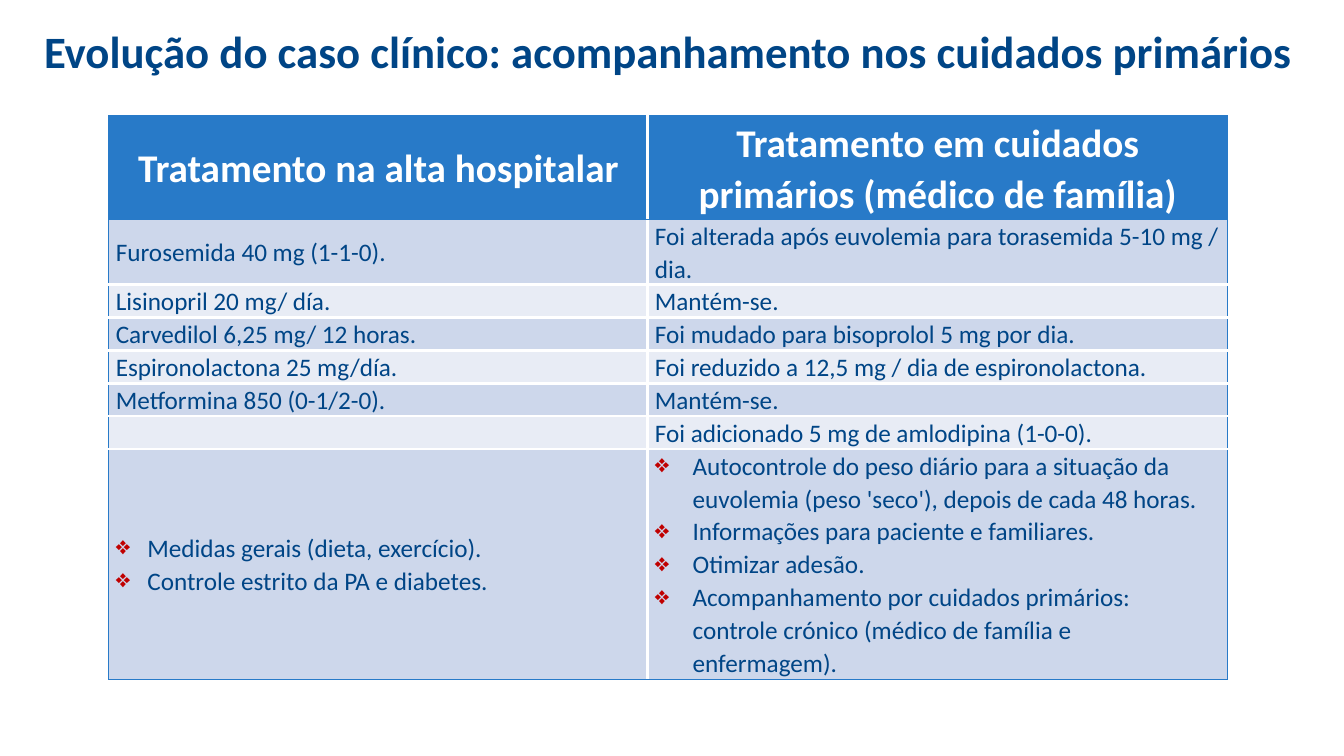
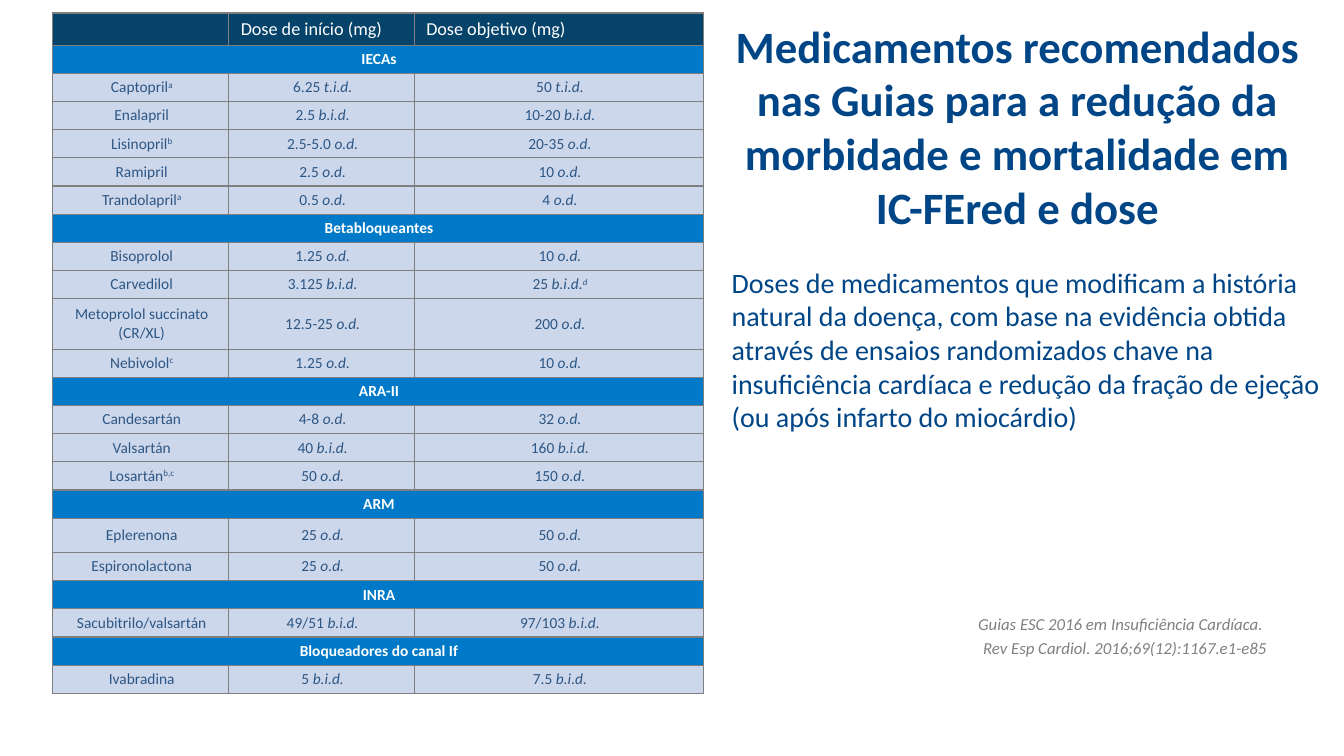
from dataclasses import dataclass

from lxml import etree
from pptx import Presentation
from pptx.dml.color import RGBColor
from pptx.enum.text import MSO_ANCHOR, PP_ALIGN
from pptx.oxml.ns import qn
from pptx.util import Pt

LEFT, CENTER, RIGHT = PP_ALIGN.LEFT, PP_ALIGN.CENTER, PP_ALIGN.RIGHT
TOP, MIDDLE = MSO_ANCHOR.TOP, MSO_ANCHOR.MIDDLE


@dataclass(frozen=True)
class Theme:
    font: str = "Calibri"
    navy: str = "004586"
    blue: str = "287AC8"
    band_dark: str = "CDD7EB"
    band_light: str = "E8ECF5"
    dose_header: str = "06436B"
    group: str = "007AC8"
    dose_text: str = "2C5684"
    grid: str = "7F7F7F"
    gray: str = "808080"
    bullet: str = "C00000"
    white: str = "FFFFFF"
    title_size: float = 32
    heading_size: float = 28
    intro_size: float = 20
    body_size: float = 18
    dose_header_size: float = 13
    source_size: float = 12
    dose_size: float = 11


THEME = Theme()

# Treatment table: a list in a cell becomes bullets
TREATMENT_HEADER = ("Tratamento na alta hospitalar",
                    "Tratamento em cuidados primários (médico de família)")
TREATMENTS = [
    ("Furosemida 40 mg (1-1-0).",
     "Foi alterada após euvolemia para torasemida 5-10 mg / dia."),
    ("Lisinopril 20 mg/ día.", "Mantém-se."),
    ("Carvedilol 6,25 mg/ 12 horas.",
     "Foi mudado para bisoprolol 5 mg por dia."),
    ("Espironolactona 25 mg/día.",
     "Foi reduzido a 12,5 mg / dia de espironolactona."),
    ("Metformina 850 (0-1/2-0).", "Mantém-se."),
    ("", "Foi adicionado 5 mg de amlodipina (1-0-0)."),
    (["Medidas gerais (dieta, exercício).",
      "Controle estrito da PA e diabetes."],
     ["Autocontrole do peso diário para a situação da euvolemia "
      "(peso 'seco'), depois de cada 48 horas.",
      "Informações para paciente e familiares.",
      "Otimizar adesão.",
      "Acompanhamento por cuidados primários: controle crónico "
      "(médico de família e enfermagem)."]),
]
TREATMENT_HEIGHTS = [74, 46.5] + [23.5] * 5 + [164.5]
BULLET_INDENTS = (22.5, 27)

# Dose table: the text after ^ is a superscript mark
DOSE_HEADER = ("", "Dose de início (mg)", "Dose objetivo (mg)")
DOSE_GROUPS = {
    "IECAs": [
        ("Captopril^a", "6.25 t.i.d.", "50 t.i.d."),
        ("Enalapril", "2.5 b.i.d.", "10-20 b.i.d."),
        ("Lisinopril^b", "2.5-5.0 o.d.", "20-35 o.d."),
        ("Ramipril", "2.5 o.d.", "10 o.d."),
        ("Trandolapril^a", "0.5 o.d.", "4 o.d."),
    ],
    "Betabloqueantes": [
        ("Bisoprolol", "1.25 o.d.", "10 o.d."),
        ("Carvedilol", "3.125 b.i.d.", "25 b.i.d.^d"),
        ("Metoprolol succinato (CR/XL)", "12.5-25 o.d.", "200 o.d."),
        ("Nebivolol^c", "1.25 o.d.", "10 o.d."),
    ],
    "ARA-II": [
        ("Candesartán", "4-8 o.d.", "32 o.d."),
        ("Valsartán", "40 b.i.d.", "160 b.i.d."),
        ("Losartán^b,c", "50 o.d.", "150 o.d."),
    ],
    "ARM": [
        ("Eplerenona", "25 o.d.", "50 o.d."),
        ("Espironolactona", "25 o.d.", "50 o.d."),
    ],
    "INRA": [("Sacubitrilo/valsartán", "49/51 b.i.d.", "97/103 b.i.d.")],
    "Bloqueadores do canal If": [("Ivabradina", "5 b.i.d.", "7.5 b.i.d.")],
}
DOSE_ROW = 20.15
TALL_ROWS = {"Metoprolol succinato (CR/XL)": 36, "Eplerenona": 24.5}


# Text
def add_span(para, text, size=THEME.body_size, color=THEME.navy, bold=False,
             italic=False, superscript=False):
    span = para.add_run()
    span.text = text
    font = span.font
    font.name, font.size = THEME.font, Pt(size)
    font.bold, font.italic = bold, italic
    font.color.rgb = RGBColor.from_string(color)
    if superscript:
        font._element.set("baseline", "30000")


def add_bullet(para, indent):
    props = para._p.get_or_add_pPr()
    props.set("marL", str(Pt(indent)))
    props.set("indent", str(-Pt(indent)))
    color = etree.SubElement(props, qn("a:buClr"))
    etree.SubElement(color, qn("a:srgbClr"), val=THEME.bullet)
    etree.SubElement(props, qn("a:buChar"), char="❖")


def add_text(page, area, lines, align=LEFT, anchor=TOP, gap=0, **style):
    box = page.shapes.add_textbox(*map(Pt, area))
    frame = box.text_frame
    frame.word_wrap, frame.vertical_anchor = True, anchor
    for index, line in enumerate(lines):
        para = frame.add_paragraph() if index else frame.paragraphs[0]
        para.alignment = align
        if index:
            para.space_before = Pt(gap)
        add_span(para, line, **style)


def add_title(page, area, text):
    add_text(page, area, [text], align=CENTER, anchor=MIDDLE,
             size=THEME.title_size, bold=True)


# Tables
def add_grid(page, left, top, widths, heights):
    frame = page.shapes.add_table(len(heights), len(widths), Pt(left), Pt(top),
                                  Pt(sum(widths)), Pt(sum(heights)))
    table = frame.table
    table.first_row = table.horz_banding = False
    for column, width in zip(table.columns, widths):
        column.width = Pt(width)
    for row, height in zip(table.rows, heights):
        row.height = Pt(height)
    return table


def style_cell(cell, fill, borders, margins):
    """Borders come as (color, width) for left, right, top and bottom."""
    props = cell._tc.get_or_add_tcPr()
    for side, (color, width) in zip("LRTB", borders):
        line = etree.SubElement(props, qn(f"a:ln{side}"), w=str(Pt(width)))
        solid = etree.SubElement(line, qn("a:solidFill"))
        etree.SubElement(solid, qn("a:srgbClr"), val=color)
    cell.fill.solid()
    cell.fill.fore_color.rgb = RGBColor.from_string(fill)
    cell.vertical_anchor = MIDDLE
    (cell.margin_left, cell.margin_right,
     cell.margin_top, cell.margin_bottom) = map(Pt, margins)


def add_treatment_table(page):
    table = add_grid(page, 77.75, 82.75, (385, 414), TREATMENT_HEIGHTS)
    edge, inner = (THEME.blue, 1), (THEME.white, 2.25)
    last = len(TREATMENTS)
    for r, row in enumerate([TREATMENT_HEADER, *TREATMENTS]):
        header = r == 0
        band = THEME.band_dark if r % 2 else THEME.band_light
        for c, content in enumerate(row):
            cell = table.cell(r, c)
            borders = (inner if c else edge, edge if c else inner,
                       edge if r <= 1 else inner,
                       edge if r in (0, last) else inner)
            style_cell(cell, THEME.blue if header else band, borders,
                       (5, 5, 0, 0))
            bulleted = isinstance(content, list)
            frame = cell.text_frame
            for index, line in enumerate(content if bulleted else [content]):
                para = frame.add_paragraph() if index else frame.paragraphs[0]
                if bulleted:
                    add_bullet(para, BULLET_INDENTS[c])
                para.line_spacing = 1.07
                if header:
                    para.alignment = CENTER
                    add_span(para, line, size=THEME.heading_size,
                             color=THEME.white, bold=True)
                elif line:
                    add_span(para, line)


def write_dose(para, text, is_dose):
    style = {"size": THEME.dose_size, "color": THEME.dose_text}
    label, _, mark = text.partition("^")
    if is_dose:
        amount, unit = label.split(" ")
        add_span(para, amount + " ", **style)
        label = unit
    add_span(para, label, italic=is_dose, **style)
    if mark:
        add_span(para, mark, italic=is_dose, superscript=True, **style)


def add_dose_table(page):
    rows = [DOSE_HEADER]
    for group, drugs in DOSE_GROUPS.items():
        rows += [(group,), *drugs]
    heights = [23] + [TALL_ROWS.get(row[0], DOSE_ROW) for row in rows[1:]]
    table = add_grid(page, 37.5, 9.25, (126, 132.5, 206.5), heights)
    borders = [(THEME.grid, 1)] * 4
    for r, row in enumerate(rows):
        is_group = len(row) == 1
        fill = (THEME.dose_header if r == 0
                else THEME.group if is_group else THEME.band_dark)
        for c in range(len(DOSE_HEADER)):
            style_cell(table.cell(r, c), fill, borders, (8.5, 7, 1.5, 1.5))
        if is_group:
            table.cell(r, 0).merge(table.cell(r, len(DOSE_HEADER) - 1))
        for c, text in enumerate(row):
            para = table.cell(r, c).text_frame.paragraphs[0]
            if r == 0 and text:
                add_span(para, text, size=THEME.dose_header_size,
                         color=THEME.white)
            elif r == 0:
                # An empty cell keeps the header's line height
                end = para._p.get_or_add_endParaRPr()
                end.set("sz", str(THEME.dose_header_size * 100))
            else:
                para.alignment = CENTER
                if is_group:
                    add_span(para, text, size=THEME.dose_size,
                             color=THEME.white, bold=True)
                else:
                    write_dose(para, text, is_dose=c > 0)


# Slides
def build_follow_up(page):
    add_title(page, (15, 12, 925, 48),
              "Evolução do caso clínico: acompanhamento nos cuidados primários")
    add_treatment_table(page)


def build_doses(page):
    add_dose_table(page)
    add_title(page, (514, 8, 425.5, 164),
              "Medicamentos recomendados nas Guias para a redução da "
              "morbidade e mortalidade em IC-FEred e dose")
    add_text(page, (515.5, 186, 438, 128),
             ["Doses de medicamentos que modificam a história natural da "
              "doença, com base na evidência obtida através de ensaios "
              "randomizados chave na insuficiência cardíaca e redução da "
              "fração de ejeção (ou após infarto do miocárdio)"],
             size=THEME.intro_size)
    add_text(page, (612, 435, 300, 56),
             ["Guias ESC 2016 em Insuficiência Cardíaca. ",
              "Rev Esp Cardiol. 2016;69(12):1167.e1-e85"],
             align=RIGHT, gap=2.4, size=THEME.source_size, color=THEME.gray,
             italic=True)


def main():
    deck = Presentation()
    deck.slide_width, deck.slide_height = Pt(960), Pt(540)
    for build in (build_follow_up, build_doses):
        build(deck.slides.add_slide(deck.slide_layouts[6]))
    deck.save("out.pptx")


if __name__ == "__main__":
    main()
